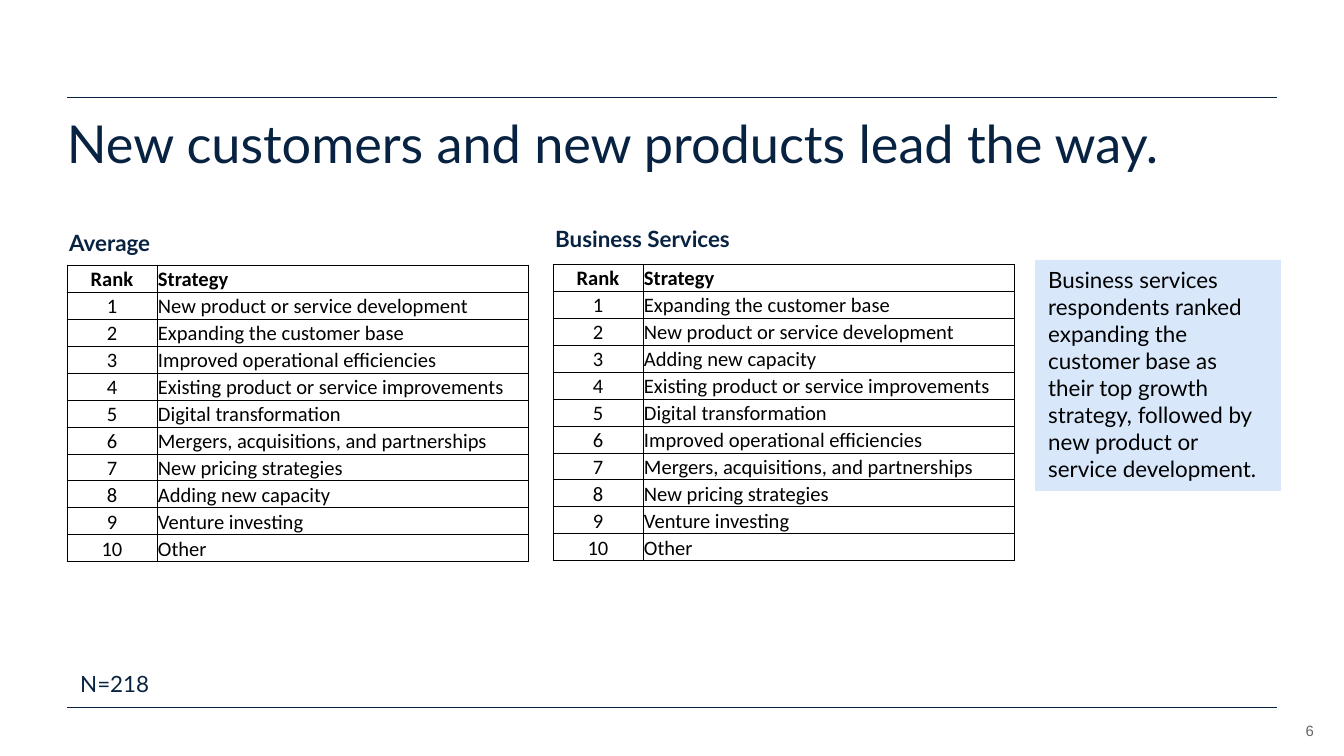
from lxml import etree
from pptx import Presentation
from pptx.dml.color import RGBColor
from pptx.enum.shapes import MSO_CONNECTOR, MSO_SHAPE
from pptx.enum.text import MSO_ANCHOR, PP_ALIGN
from pptx.oxml.ns import qn
from pptx.util import Pt

LEFT, CENTER, RIGHT = PP_ALIGN.LEFT, PP_ALIGN.CENTER, PP_ALIGN.RIGHT
TOP, BOTTOM = MSO_ANCHOR.TOP, MSO_ANCHOR.BOTTOM
STRAIGHT, RECTANGLE = MSO_CONNECTOR.STRAIGHT, MSO_SHAPE.RECTANGLE

NAVY = RGBColor(0x08, 0x22, 0x41)
BLACK = RGBColor(0x00, 0x00, 0x00)
GRAY = RGBColor(0x66, 0x66, 0x66)
PALE_BLUE = RGBColor(0xD8, 0xE8, 0xFA)

EMU_PER_PX = 6804
SLIDE_SIZE = (1344, 756)
RULE_LEFT, RULE_RIGHT = 67, 1277
RULE_TOPS = (97, 707)
COLUMN_WIDTHS = (90, 371)
ROW_HEIGHT = 27
CELL_INSET = 1

TITLE = "New customers and new products lead the way."
COMMENT = (
    "Business services respondents ranked expanding the customer base as "
    "their top growth strategy, followed by new product or service development."
)
HEADER = ("Rank", "Strategy")
RANKINGS = [
    {
        "name": "Average",
        "label_at": (56, 223),
        "table_at": (67, 265),
        "strategies": [
            "New product or service development",
            "Expanding the customer base",
            "Improved operational efficiencies",
            "Existing product or service improvements",
            "Digital transformation",
            "Mergers, acquisitions, and partnerships",
            "New pricing strategies",
            "Adding new capacity",
            "Venture investing",
            "Other",
        ],
    },
    {
        "name": "Business Services",
        "label_at": (542, 219),
        "table_at": (553, 264),
        "strategies": [
            "Expanding the customer base",
            "New product or service development",
            "Adding new capacity",
            "Existing product or service improvements",
            "Digital transformation",
            "Improved operational efficiencies",
            "Mergers, acquisitions, and partnerships",
            "New pricing strategies",
            "Venture investing",
            "Other",
        ],
    },
]


def px(*lengths):
    return [length * EMU_PER_PX for length in lengths]


def write(text_frame, text, size, color, font="Lato", bold=False, align=LEFT):
    text_frame.text = text
    text_frame.word_wrap = True
    paragraph = text_frame.paragraphs[0]
    paragraph.alignment = align
    run_font = paragraph.runs[0].font
    run_font.name = font
    run_font.size = Pt(size)
    run_font.bold = bold
    run_font.color.rgb = color
    return paragraph


def clear_insets(text_frame):
    text_frame.margin_left = text_frame.margin_right = 0
    text_frame.margin_top = text_frame.margin_bottom = 0


def add_rule(slide, top):
    rule = slide.shapes.add_connector(STRAIGHT, *px(RULE_LEFT, top, RULE_RIGHT, top))
    rule.line.color.rgb = NAVY
    rule.line.width = Pt(0.5)
    etree.SubElement(rule._element.spPr, qn("a:effectLst"))


def add_text(slide, box, text, size, color, **style):
    text_frame = slide.shapes.add_textbox(*px(*box)).text_frame
    write(text_frame, text, size, color, **style)
    return text_frame


def add_borders(cell):
    properties = cell._tc.get_or_add_tcPr()
    for position, side in enumerate(("a:lnL", "a:lnR", "a:lnT", "a:lnB")):
        line = etree.Element(qn(side), w=str(Pt(0.5)))
        fill = etree.SubElement(line, qn("a:solidFill"))
        etree.SubElement(fill, qn("a:srgbClr"), val=str(BLACK))
        properties.insert(position, line)


def add_ranking(slide, ranking):
    rows = [HEADER] + [
        (str(rank), strategy)
        for rank, strategy in enumerate(ranking["strategies"], start=1)
    ]
    size = (sum(COLUMN_WIDTHS), ROW_HEIGHT * len(rows))
    table = slide.shapes.add_table(
        len(rows), len(HEADER), *px(*ranking["table_at"], *size)
    ).table
    table.first_row = table.horz_banding = False
    for column, width in zip(table.columns, px(*COLUMN_WIDTHS)):
        column.width = width
    for row_index, row in enumerate(rows):
        table.rows[row_index].height = ROW_HEIGHT * EMU_PER_PX
        for column_index, text in enumerate(row):
            cell = table.cell(row_index, column_index)
            cell.fill.background()
            cell.vertical_anchor = BOTTOM
            cell.margin_left = cell.margin_right = cell.margin_top = CELL_INSET * EMU_PER_PX
            cell.margin_bottom = 0
            write(cell.text_frame, text, 11, BLACK, font="Calibri",
                  bold=row_index == 0, align=LEFT if column_index else CENTER)
            add_borders(cell)
    add_text(slide, (*ranking["label_at"], 211, 40), ranking["name"], 12, NAVY, bold=True)


def add_comment(slide):
    shape = slide.shapes.add_shape(RECTANGLE, *px(1035, 260, 246, 231))
    shape.shadow.inherit = False
    shape.fill.solid()
    shape.fill.fore_color.rgb = PALE_BLUE
    shape.line.fill.background()
    shape.text_frame.vertical_anchor = TOP
    write(shape.text_frame, COMMENT, 12, BLACK)


def add_title(slide):
    title = slide.shapes.title
    title.left, title.top, title.width, title.height = px(RULE_LEFT, 118, 1210, 74)
    clear_insets(title.text_frame)
    title.text_frame.vertical_anchor = TOP
    write(title.text_frame, TITLE, 28, NAVY).line_spacing = 0.9


def main():
    presentation = Presentation()
    presentation.slide_width, presentation.slide_height = px(*SLIDE_SIZE)
    slide = presentation.slides.add_slide(presentation.slide_layouts[5])
    for top in RULE_TOPS:
        add_rule(slide, top)
    add_title(slide)
    add_comment(slide)
    for ranking in RANKINGS:
        add_ranking(slide, ranking)
    add_text(slide, (67, 664, 181, 40), "N=218", 12, NAVY)
    number = add_text(slide, (1251, 715, 63, 24), "6", 8, GRAY, font="Arial", align=RIGHT)
    clear_insets(number)
    number.vertical_anchor = BOTTOM
    presentation.save("out.pptx")


if __name__ == "__main__":
    main()
